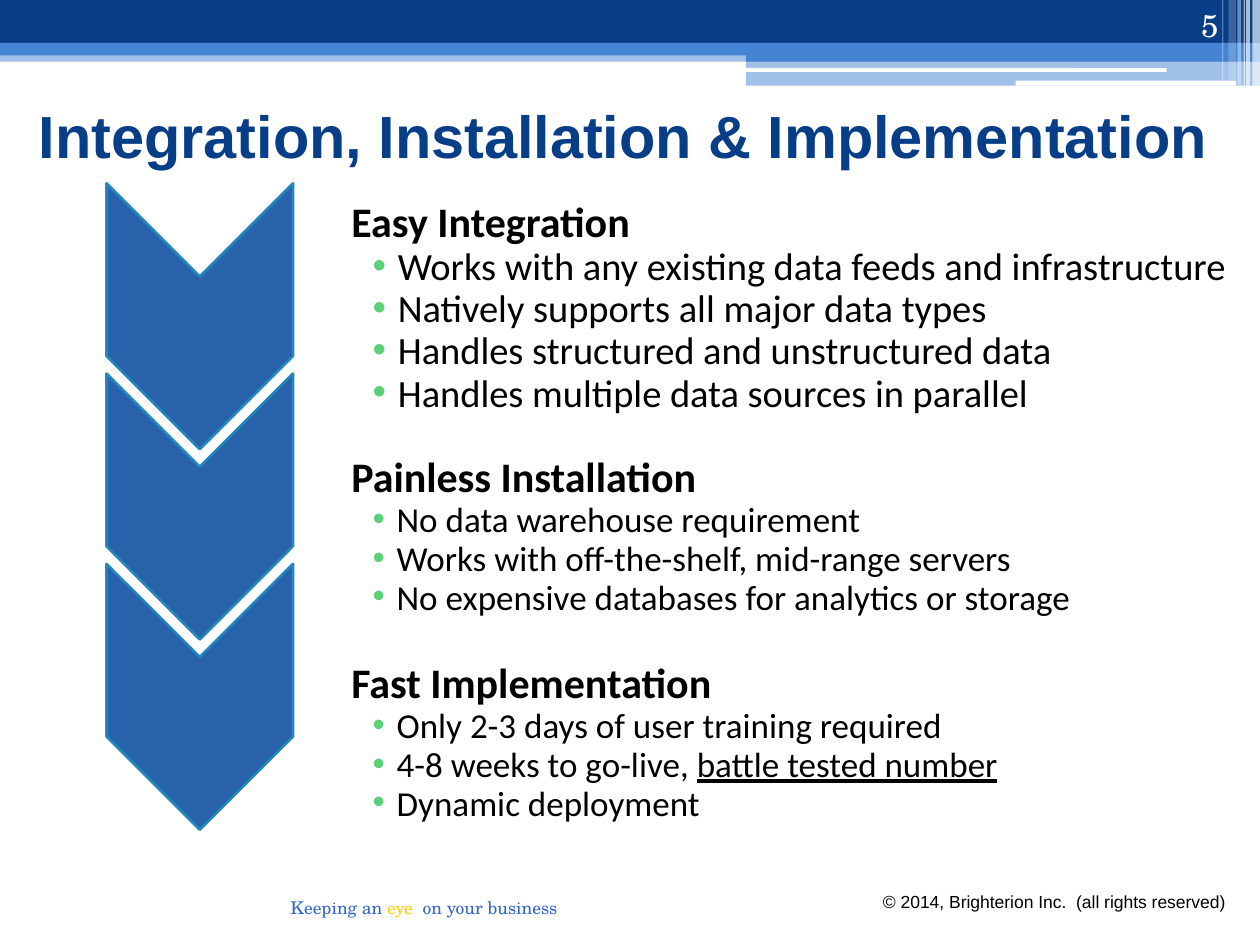
from dataclasses import dataclass

from lxml.etree import SubElement
from pptx import Presentation
from pptx.dml.color import RGBColor
from pptx.enum.shapes import MSO_SHAPE as Preset
from pptx.enum.text import MSO_ANCHOR as Anchor, PP_ALIGN as Align
from pptx.oxml.ns import qn
from pptx.util import Inches, Pt


@dataclass(frozen=True)
class Theme:
    """Colours, fonts and type sizes of the slide."""
    navy: str = "073E87"
    blue: str = "4584D3"
    white: str = "FFFFFF"
    black: str = "000000"
    chevron: str = "2862AA"
    chevron_edge: str = "2487BB"
    bullet: str = "5BD078"
    tagline: str = "3366CC"
    accent: str = "FFCC00"
    sans: str = "Arial"
    body: str = "Calibri"
    serif: str = "TeX Gyre Schola"
    title_size: int = 34
    heading_size: int = 24
    number_size: int = 18
    footer_size: int = 10


THEME = Theme()

BANDS = [
    (0, 0.4, 10, 0.09, THEME.blue, 50),
    (0, 0, 10, 0.34, THEME.navy, 100),
    (0, 0.34, 10, 0.1, THEME.blue, 100),
    (5.92, 0.39, 4.08, 0.1, THEME.blue, 100),
    (5.92, 0.48, 4.08, 0.2, THEME.blue, 50),
]
RULES = [(5.91, 0.54, 3.35, 0.03), (8.06, 0.64, 1.75, 0.04)]
STRIPES = [
    (9.94, 0.06, 0.68, 65),
    (9.89, 0.03, 0.68, 65),
    (9.87, 0.01, 0.68, 60),
    (9.82, 0.03, 0.68, 40),
    (9.75, 0.06, 0.64, 20),
    (9.7, 0.01, 0.64, 30),
]
SECTIONS = [
    ("Easy Integration", 0, 22, 0.5, 0.2, [
        ["Works with any existing data feeds and infrastructure"],
        ["Natively supports all major data types"],
        ["Handles structured and unstructured data"],
        ["Handles multiple data sources in parallel"],
    ]),
    ("Painless Installation", 26, 20, 0.49, 0.19, [
        ["No data warehouse requirement"],
        ["Works with off-the-shelf, mid-range servers"],
        ["No expensive databases for analytics or storage"],
    ]),
    ("Fast Implementation", 28, 20, 0.49, 0.19, [
        ["Only 2-3 days of user training required"],
        ["4-8 weeks to go-live, ", "battle tested number"],
        ["Dynamic deployment"],
    ]),
]


def apply_format(target, values):
    """Set each named attribute on the target."""
    for name, value in values.items():
        setattr(target, name, value)


def add_block(slide, preset, box, color, opacity=100):
    """Add a flat, borderless shape with optional transparency."""
    block = slide.shapes.add_shape(preset, *map(Inches, box))
    block.shadow.inherit = False
    block.fill.solid()
    block.fill.fore_color.rgb = RGBColor.from_string(color)
    block.line.fill.background()
    if opacity < 100:
        tint = block.fill._xPr.find(".//" + qn("a:srgbClr"))
        SubElement(tint, qn("a:alpha"), val=str(opacity * 1000))
    return block


def add_frame(slide, box, **values):
    """Add a text box and return its text frame."""
    frame = slide.shapes.add_textbox(*map(Inches, box)).text_frame
    apply_format(frame, {"word_wrap": True, **values})
    return frame


def add_run(paragraph, text, family, size, color, **values):
    """Append a formatted run to the paragraph."""
    run = paragraph.add_run()
    run.text = text
    apply_format(run.font, {"name": family, "size": Pt(size), **values})
    run.font.color.rgb = RGBColor.from_string(color)


def set_indent(paragraph, margin, hanging=0.0, bulleted=False):
    """Set the margins and, when asked, a coloured bullet."""
    properties = paragraph._p.get_or_add_pPr()
    properties.set("marL", str(Inches(margin)))
    properties.set("indent", str(-Inches(hanging)))
    if bulleted:
        color = SubElement(properties, qn("a:buClr"))
        SubElement(color, qn("a:srgbClr"), val=THEME.bullet)
        SubElement(properties, qn("a:buFont"), typeface=THEME.sans)
        SubElement(properties, qn("a:buChar"), char="•")


def add_banner(slide):
    """Draw the header bands, white rules and edge stripes."""
    for *box, color, opacity in BANDS:
        add_block(slide, Preset.RECTANGLE, box, color, opacity)
    for box in RULES:
        add_block(slide, Preset.ROUNDED_RECTANGLE, box, THEME.white)
    for left, width, height, opacity in STRIPES:
        add_block(slide, Preset.RECTANGLE, (left, 0, width, height), THEME.white, opacity)


def add_footer(slide):
    """Write the copyright line and the tagline."""
    notice = add_frame(slide, (6.91, 7.02, 2.94, 0.27), word_wrap=False)
    add_run(notice.paragraphs[0], "© 2014, Brighterion Inc.  (all rights reserved)",
            THEME.sans, THEME.footer_size, THEME.black)
    tagline = add_frame(slide, (1.89, 7.07, 2.63, 0.27)).paragraphs[0]
    tagline.alignment = Align.RIGHT
    for words, color in [("Keeping an ", THEME.tagline), ("eye ", THEME.accent),
                         (" on your business", THEME.tagline)]:
        add_run(tagline, words, THEME.serif, THEME.footer_size, color)


def add_headline(slide):
    """Write the slide number and the title."""
    number = add_frame(slide, (8.94, 0, 0.83, 0.4), vertical_anchor=Anchor.BOTTOM).paragraphs[0]
    number.alignment = Align.RIGHT
    add_run(number, "5", THEME.serif, THEME.number_size, THEME.white)
    title = add_frame(slide, (0.21, 0.57, 9.59, 1), vertical_anchor=Anchor.MIDDLE)
    add_run(title.paragraphs[0], "Integration, Installation & Implementation",
            THEME.sans, THEME.title_size, THEME.navy, bold=True)


def add_sections(slide):
    """Write the three headed bullet lists in one text box."""
    body = add_frame(slide, (2.56, 1.58, 7.3, 5.22))
    for heading, gap, size, margin, hanging, points in SECTIONS:
        topic = body.add_paragraph() if gap else body.paragraphs[0]
        set_indent(topic, 0.13)
        apply_format(topic, {"line_spacing": 0.8, "space_before": Pt(gap)})
        add_run(topic, heading, THEME.body, THEME.heading_size, THEME.black, bold=True)
        for phrases in points:
            point = body.add_paragraph()
            set_indent(point, margin, hanging, bulleted=True)
            apply_format(point, {"line_spacing": 0.8, "space_before": Pt(3)})
            for position, phrase in enumerate(phrases):
                add_run(point, phrase, THEME.body, size, THEME.black, underline=position > 0)


def add_chevrons(slide):
    """Stack the downward chevrons at an equal pitch."""
    for step in range(len(SECTIONS)):
        box = (0.53, 1.77 + 1.51 * step, 2.11, 1.48)
        chevron = add_block(slide, Preset.CHEVRON, box, THEME.chevron)
        chevron.rotation = 90
        chevron.line.color.rgb = RGBColor.from_string(THEME.chevron_edge)
        chevron.line.width = Pt(1.5)


def main():
    """Build and save the slide."""
    deck = Presentation()
    apply_format(deck, {"slide_width": Inches(10), "slide_height": Inches(7.5)})
    slide = deck.slides.add_slide(deck.slide_layouts[6])
    for add_part in (add_banner, add_footer, add_headline, add_sections, add_chevrons):
        add_part(slide)
    deck.save("out.pptx")


if __name__ == "__main__":
    main()
